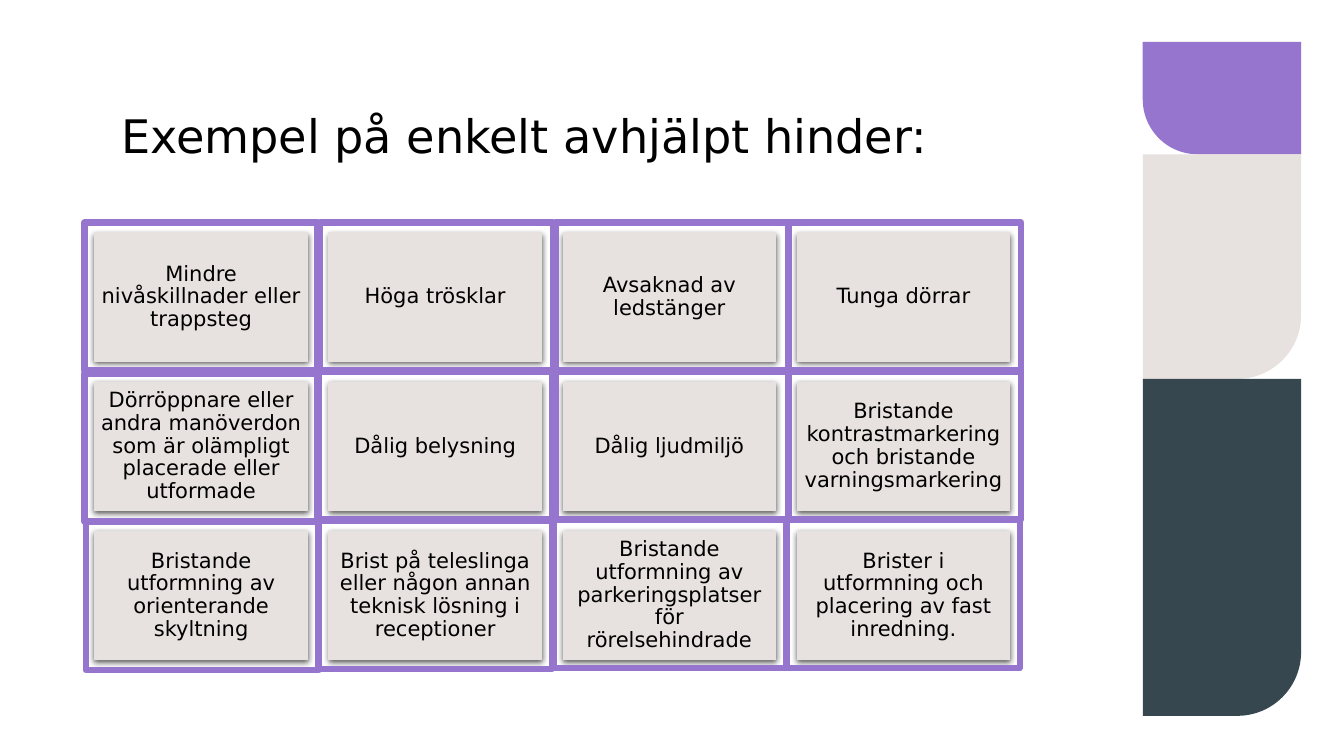
from lxml import etree
from pptx import Presentation
from pptx.dml.color import RGBColor
from pptx.enum.shapes import MSO_SHAPE
from pptx.enum.text import MSO_ANCHOR, MSO_AUTO_SIZE, PP_ALIGN
from pptx.oxml.ns import qn
from pptx.util import Cm, Pt

RECT = MSO_SHAPE.RECTANGLE
ROUND_ONE = MSO_SHAPE.ROUND_1_RECTANGLE
MIDDLE, BOTTOM = MSO_ANCHOR.MIDDLE, MSO_ANCHOR.BOTTOM
LEFT, CENTER = PP_ALIGN.LEFT, PP_ALIGN.CENTER
NO_FIT = MSO_AUTO_SIZE.NONE

FONT = "DejaVu Sans"
COLORS = {
    "purple": "9575CD",
    "sand": "E7E1DF",
    "slate": "37474F",
    "text": "000000",
}
OBSTACLES = [
    ["Mindre nivåskillnader eller trappsteg", "Höga trösklar",
     "Avsaknad av ledstänger", "Tunga dörrar"],
    ["Dörröppnare eller andra manöverdon som är olämpligt placerade eller utformade",
     "Dålig belysning", "Dålig ljudmiljö",
     "Bristande kontrastmarkering och bristande varningsmarkering"],
    ["Bristande utformning av orienterande skyltning",
     "Brist på teleslinga eller någon annan teknisk lösning i receptioner",
     "Bristande utformning av parkeringsplatser för rörelsehindrade",
     "Brister i utformning och placering av fast inredning."],
]
FRAME_NUDGES = {
    (0, 1): (0.03, 0), (0, 2): (0.05, 0),
    (1, 0): (0, 0.05), (1, 2): (0.05, 0),
    (2, 0): (0.03, 0.05), (2, 1): (0, 0.02), (2, 3): (-0.03, 0),
}


def color(name):
    return RGBColor.from_string(COLORS[name])


def add_box(s, kind, x, y, w, h, fill=None, line=None, weight=0.75):
    sp = s.shapes.add_shape(kind, Cm(x), Cm(y), Cm(w), Cm(h))
    sp.shadow.inherit = False
    if fill:
        sp.fill.solid()
        sp.fill.fore_color.rgb = color(fill)
    else:
        sp.fill.background()
    if line:
        sp.line.color.rgb = color(line)
        sp.line.width = Pt(weight)
    else:
        sp.line.fill.background()
    return sp


def write(tf, text, size, align, anchor, inset):
    tf.word_wrap = True
    tf.auto_size = NO_FIT
    tf.vertical_anchor = anchor
    tf.margin_left = tf.margin_right = Cm(inset)
    tf.margin_top = tf.margin_bottom = Cm(inset)
    p = tf.paragraphs[0]
    p.text = text
    p.alignment = align
    p.font.name = FONT
    p.font.size = Pt(size)
    p.font.color.rgb = color("text")
    return p


def add_shadow(sp):
    effects = sp.element.spPr.find(qn("a:effectLst"))
    shadow = etree.SubElement(effects, qn("a:outerShdw"), blurRad=str(Pt(4.5)),
                              dist=str(Pt(1.5)), dir="5400000", rotWithShape="0")
    black = etree.SubElement(shadow, qn("a:srgbClr"), val="000000")
    etree.SubElement(black, qn("a:alpha"), val="63000")


def add_title(s, x, y, w, h):
    title = s.shapes.title
    title.left, title.top, title.width, title.height = Cm(x), Cm(y), Cm(w), Cm(h)
    write(title.text_frame, "Exempel på enkelt avhjälpt hinder:", 33, LEFT, BOTTOM, 0)


def add_side_band(s, x, y, w, h):
    unit = h / 6
    bars = [(1, "purple", 0.489, True), (2, "sand", 0.403, False),
            (3, "slate", 0.403, False)]
    for units, fill, radius, mirrored in bars:
        bar = add_box(s, ROUND_ONE, x, y, w, units * unit, fill)
        bar.adjustments[0] = radius
        xfrm = bar.element.spPr.find(qn("a:xfrm"))
        xfrm.set("flipV", "1")
        if mirrored:
            xfrm.set("flipH", "1")
        y += units * unit


def add_cards(s, x, y, w, h):
    card_w, card_h = 5.36, 3.23
    step_x, step_y = (w - card_w) / 3, (h - card_h) / 2
    for row, texts in enumerate(OBSTACLES):
        for col, text in enumerate(texts):
            card = add_box(s, RECT, x + col * step_x, y + row * step_y,
                           card_w, card_h, "sand", "sand")
            add_shadow(card)
            p = write(card.text_frame, text, 15, CENTER, MIDDLE, 0.15)
            p.line_spacing = 0.9


def add_frames(s, x, y, w, h):
    frame_w, frame_h = 5.87, 3.73
    step_x, step_y = (w - frame_w) / 3, (h - frame_h) / 2
    for row, texts in enumerate(OBSTACLES):
        for col in range(len(texts)):
            dx, dy = FRAME_NUDGES.get((row, col), (0, 0))
            add_box(s, RECT, x + col * step_x + dx, y + row * step_y + dy,
                    frame_w, frame_h, line="purple", weight=4.5)


def main():
    prs = Presentation()
    prs.slide_width, prs.slide_height = Cm(33.87), Cm(19.05)
    s = prs.slides.add_slide(prs.slide_layouts[5])
    add_side_band(s, 28.8, 1.06, 3.99, 16.98)
    add_title(s, 3.05, 1.19, 24, 2.92)
    add_cards(s, 2.39, 5.87, 23.06, 10.75)
    add_frames(s, 2.13, 5.61, 23.6, 11.23)
    prs.save("out.pptx")


if __name__ == "__main__":
    main()
